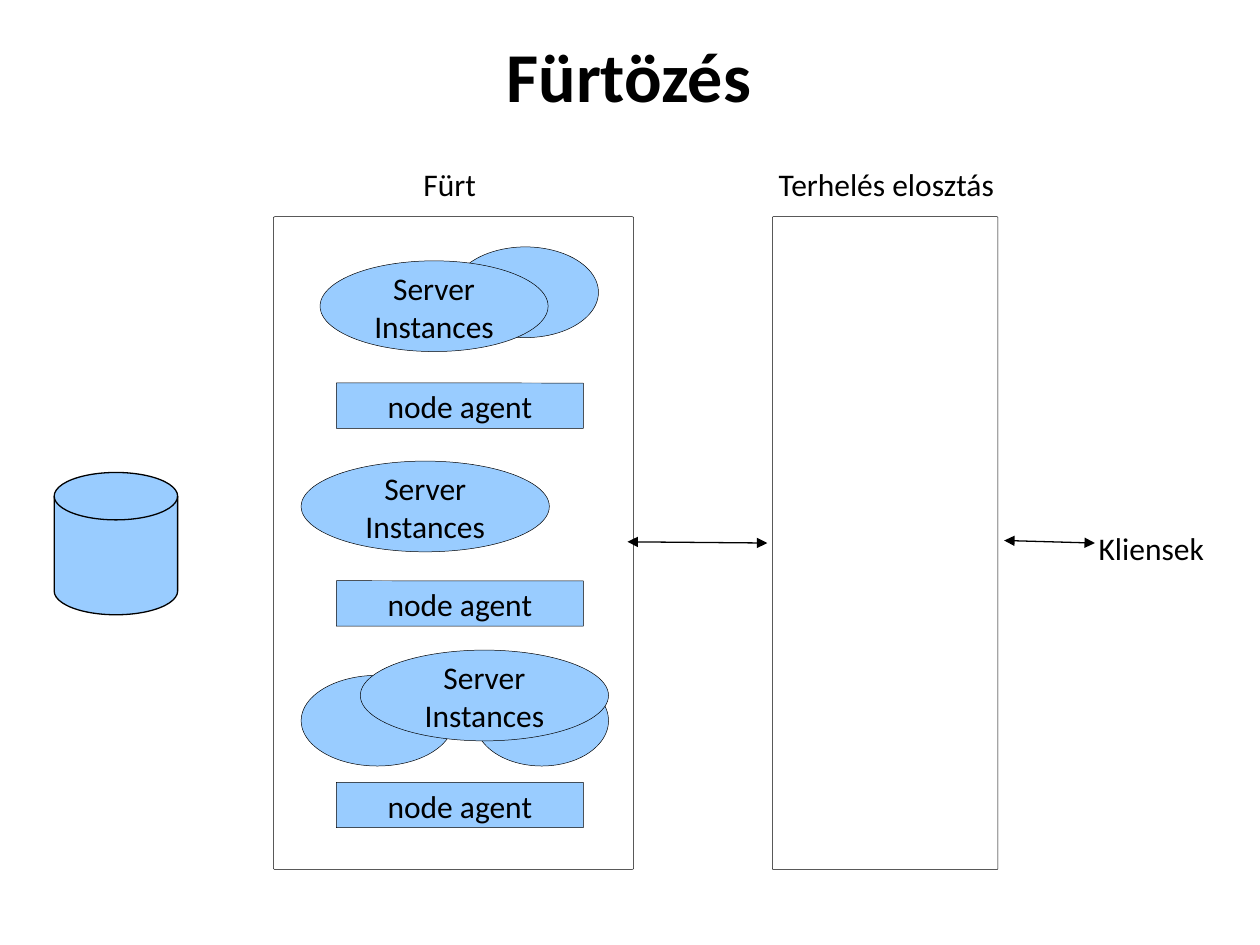
from lxml import etree
from pptx import Presentation
from pptx.dml.color import RGBColor
from pptx.enum.shapes import MSO_CONNECTOR, MSO_SHAPE
from pptx.enum.text import MSO_ANCHOR, PP_ALIGN
from pptx.oxml.ns import qn
from pptx.util import Inches, Pt

BLUE = "99CCFF"
BLACK = "000000"


def set_text(shape, text, size=18, bold=False, top=0.06):
    frame = shape.text_frame
    frame.text = text
    frame.margin_left = frame.margin_right = Inches(0.09)
    frame.margin_top, frame.margin_bottom = Inches(top), Inches(0.05)
    font = frame.paragraphs[0].runs[0].font
    font.name, font.size, font.bold = "Calibri", Pt(size), bold
    font.color.rgb = RGBColor.from_string(BLACK)
    return frame


def add_box(kind, left, top, width, height, text="", fill=BLUE, line=0.28):
    shape = slide.shapes.add_shape(
        kind, Inches(left), Inches(top), Inches(width), Inches(height))
    shape.shadow.inherit = False
    if kind == MSO_SHAPE.ROUNDED_RECTANGLE:
        shape.adjustments[0] = 0.004
    if fill:
        shape.fill.solid()
        shape.fill.fore_color.rgb = RGBColor.from_string(fill)
    else:
        shape.fill.background()
    shape.line.color.rgb = RGBColor.from_string(BLACK)
    shape.line.width = Pt(line)
    if text:
        frame = set_text(shape, text)
        frame.word_wrap = True
        frame.vertical_anchor = MSO_ANCHOR.MIDDLE
        frame.paragraphs[0].alignment = PP_ALIGN.CENTER


presentation = Presentation()
presentation.slide_width, presentation.slide_height = Inches(10), Inches(7.5)
slide = presentation.slides.add_slide(presentation.slide_layouts[6])

# Further instances behind the labelled ones
for left, top, width in [(2.39, 5.36, 1.21), (3.77, 5.36, 1.06), (3.59, 1.96, 1.16)]:
    add_box(MSO_SHAPE.OVAL, left, top, width, 0.72)

# Three nodes: server instances and their agent
for left, top, width, agent_top in [
        (2.54, 2.07, 1.81, 3.04), (2.39, 3.66, 1.97, 4.61), (2.86, 5.16, 1.97, 6.21)]:
    add_box(MSO_SHAPE.ROUNDED_RECTANGLE, 2.67, agent_top, 1.96, 0.36, "node agent")
    add_box(MSO_SHAPE.OVAL, left, top, width, 0.72, "Server Instances")

# Cluster and load balancer frames
for left, width in [(2.17, 2.86), (6.13, 1.79)]:
    add_box(MSO_SHAPE.ROUNDED_RECTANGLE, left, 1.72, width, 5.18, fill=None)

# Title and labels
for text, left, top, width, height, size, bold, inset in [
        ("Fürtözés", 3.93, 0.18, 2.34, 0.71, 40, True, 0.08),
        ("Fürt", 3.27, 1.25, 0.65, 0.35, 18, False, 0.06),
        ("Terhelés elosztás", 6.09, 1.25, 1.95, 0.35, 18, False, 0.06),
        ("Kliensek", 8.63, 4.14, 1.04, 0.35, 18, False, 0.06)]:
    label = slide.shapes.add_textbox(
        Inches(left), Inches(top), Inches(width), Inches(height))
    set_text(label, text, size, bold, inset).word_wrap = False

# Double-headed arrows between cluster, balancer and clients
for start_x, start_y, end_x, end_y in [(4.98, 4.3, 6.09, 4.31), (7.97, 4.29, 8.69, 4.31)]:
    arrow = slide.shapes.add_connector(
        MSO_CONNECTOR.STRAIGHT, Inches(start_x), Inches(start_y),
        Inches(end_x), Inches(end_y))
    arrow.line.color.rgb = RGBColor.from_string(BLACK)
    arrow.line.width = Pt(0.75)
    line = arrow.line._get_or_add_ln()
    for end in ("a:headEnd", "a:tailEnd"):
        etree.SubElement(line, qn(end), type="triangle")
    etree.SubElement(arrow._element.spPr, qn("a:effectLst"))

# Database
add_box(MSO_SHAPE.FLOWCHART_MAGNETIC_DISK, 0.43, 3.75, 0.98, 1.13, line=0.75)

presentation.save("out.pptx")
